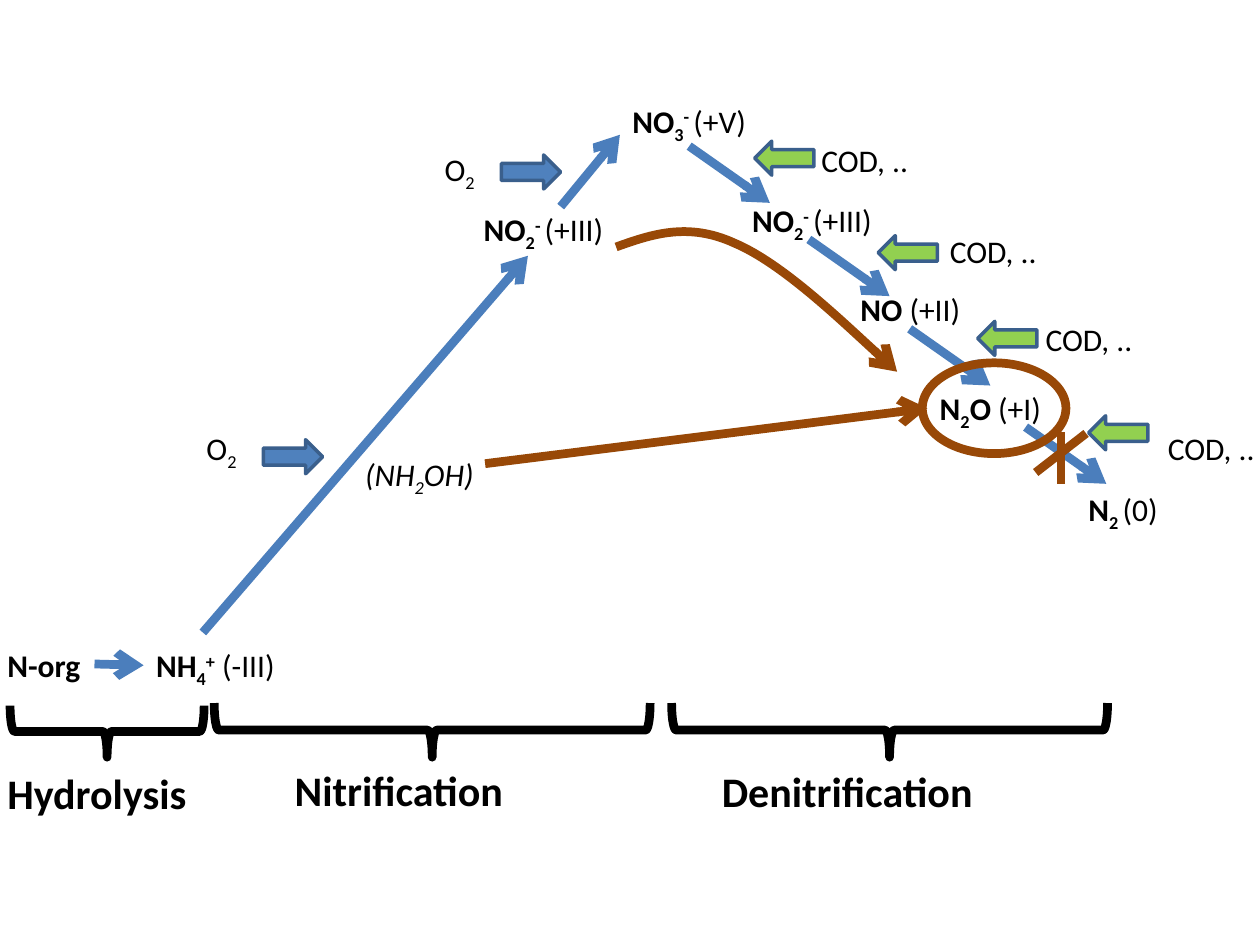
from lxml.etree import SubElement
from pptx import Presentation
from pptx.dml.color import RGBColor
from pptx.enum.shapes import MSO_CONNECTOR as Link, MSO_SHAPE as Kind
from pptx.oxml.ns import qn
from pptx.util import Inches, Pt

BLACK = RGBColor(0, 0, 0)
BLUE = RGBColor(0x4B, 0x7E, 0xBC)
FILL = RGBColor(0x4F, 0x81, 0xBD)
EDGE = RGBColor(0x3A, 0x5F, 0x8C)
GREEN = RGBColor(0x92, 0xD0, 0x50)
BROWN = RGBColor(0x98, 0x48, 0x07)

# Run styles: b bold, i italic, _ subscript, ^ superscript
NITRITE = [("NO", "b"), ("2", "b_"), ("- ", "b^"), ("(+III)", "")]
OXYGEN = [("O", ""), ("2", "_")]
COD = [("COD, ..", "")]

# left, top, width, runs
LABELS = [
    (-0.04, 5.08, 1.18, [("N-org", "b")]),
    (1.14, 5.08, 1.18, [("NH", "b"), ("4", "b_"), ("+", "b^"), (" (-III)", "")]),
    (2.8, 3.56, 1.18, [("(NH", "i"), ("2", "i_"), ("OH)", "i")]),
    (3.74, 1.62, 1.18, NITRITE),
    (4.92, 0.76, 1.42, [("NO", "b"), ("3", "b_"), ("- ", "b^"), ("(+V)", "")]),
    (5.87, 1.55, 1.18, NITRITE),
    (6.73, 2.25, 1.18, [("NO ", "b"), ("(+II)", "")]),
    (7.36, 3.04, 1.18, [("N", "b"), ("2", "b_"), ("O", "b"), (" (+I)", "")]),
    (8.54, 3.84, 1.18, [("N", "b"), ("2 ", "b_"), ("(0)", "")]),
    (1.54, 3.36, 1.18, OXYGEN),
    (3.43, 1.14, 1.18, OXYGEN),
    (6.42, 1.07, 1.18, COD),
    (7.44, 1.79, 1.18, COD),
    (8.2, 2.49, 1.18, COD),
    (9.17, 3.36, 1.18, COD),
]
# name, label left, top, width, then brace left, top, width, height
PHASES = [
    ("Hydrolysis", -0.04, 6.04, 2.84, 0.08, 5.6, 1.54, 0.41),
    ("Nitrification", 2.24, 6.02, 2.84, 1.7, 5.58, 3.46, 0.43),
    ("Denitrification", 5.63, 6.03, 4.09, 5.33, 5.58, 3.46, 0.43),
]
OXIDATION = [
    (0.75, 5.27, 1.14, 5.28),
    (1.61, 5.02, 4.19, 2.03),
    (4.45, 1.64, 4.92, 1.07),
]
REDUCTION = [(5.47, 1.16), (6.42, 1.9), (7.22, 2.61), (8.14, 3.39)]
STEP = (0.64, 0.45)
O2_INPUTS = [(2.09, 3.49), (3.98, 1.23)]
COD_INPUTS = [(5.99, 1.12), (6.97, 1.87), (7.76, 2.55), (8.64, 3.3)]
CROSS = [(8.62, 3.44, 8.22, 3.75), (8.42, 3.43, 8.42, 3.84)]
# start point, then two control points and an end point for each piece
BYPASS = [(4.89, 1.96), (5.17, 1.86), (5.46, 1.76), (5.83, 1.93),
          (6.21, 2.09), (7.12, 2.95), (7.12, 2.95)]

deck = Presentation()
deck.slide_width, deck.slide_height = Inches(10), Inches(7.5)
slide = deck.slides.add_slide(deck.slide_layouts[6])
shapes = slide.shapes


def add_text(left, top, width, height, runs, size=18):
    box = shapes.add_textbox(*map(Inches, (left, top, width, height)))
    box.text_frame.word_wrap = True
    para = box.text_frame.paragraphs[0]
    for text, style in runs:
        run = para.add_run()
        run.text = text
        font = run.font
        font.name, font.size = "Calibri", Pt(size)
        font.bold, font.italic = "b" in style, "i" in style
        font.color.rgb = BLACK
        for mark, shift in (("_", "-25000"), ("^", "30000")):
            if mark in style:
                run._r.get_or_add_rPr().set("baseline", shift)


def set_line(item, color, width=5, head=False):
    item.line.color.rgb = color
    item.line.width = Pt(width)
    if head:
        SubElement(item.line._get_or_add_ln(), qn("a:tailEnd"), type="arrow")


def add_line(ends, color, head=True):
    line = shapes.add_connector(Link.STRAIGHT, *map(Inches, ends))
    set_line(line, color, head=head)
    SubElement(line._element.spPr, qn("a:effectLst"))


def add_form(kind, left, top, width, height, line, weight=5, fill=None):
    form = shapes.add_shape(kind, *map(Inches, (left, top, width, height)))
    form.shadow.inherit = False
    if fill is None:
        form.fill.background()
    else:
        form.fill.solid()
        form.fill.fore_color.rgb = fill
    set_line(form, line, weight)
    return form


def add_curve(points, color):
    """Draw a cubic curve by grouping the freeform's points in threes."""
    pts = [(Inches(x), Inches(y)) for x, y in points]
    pen = shapes.build_freeform(*pts[0])
    pen.add_line_segments(pts[1:], close=False)
    curve = pen.convert_to_shape()
    curve.shadow.inherit = False
    curve.fill.background()
    set_line(curve, color, head=True)
    steps = list(curve._element.iter(qn("a:lnTo")))
    track = steps[0].getparent()
    for i in range(0, len(steps), 3):
        piece = SubElement(track, qn("a:cubicBezTo"))
        for step in steps[i:i + 3]:
            piece.append(step[0])
            track.remove(step)


for left, top, width, runs in LABELS:
    add_text(left, top, width, 0.4, runs)

for ends in OXIDATION:
    add_line(ends, BLUE)
for x, y in REDUCTION:
    add_line((x, y, x + STEP[0], y + STEP[1]), BLUE)

for spots, fill, turn in ((O2_INPUTS, FILL, 0), (COD_INPUTS, GREEN, 180)):
    for x, y in spots:
        arrow = add_form(Kind.RIGHT_ARROW, x, y, 0.47, 0.27, EDGE, 2, fill)
        arrow.rotation = turn

for name, left, top, width, x, y, w, h in PHASES:
    add_text(left, top, width, 0.5, [(name, "b")], 24)
    # A quarter turn about the centre swaps width and height
    brace = add_form(Kind.RIGHT_BRACE, x + (w - h) / 2, y + (h - w) / 2,
                     h, w, BLACK)
    brace.rotation = 90

add_line((3.85, 3.68, 7.36, 3.24), BROWN)
add_curve(BYPASS, BROWN)
add_form(Kind.OVAL, 7.32, 2.88, 1.14, 0.72, BROWN)
for ends in CROSS:
    add_line(ends, BROWN, head=False)

deck.save("out.pptx")
